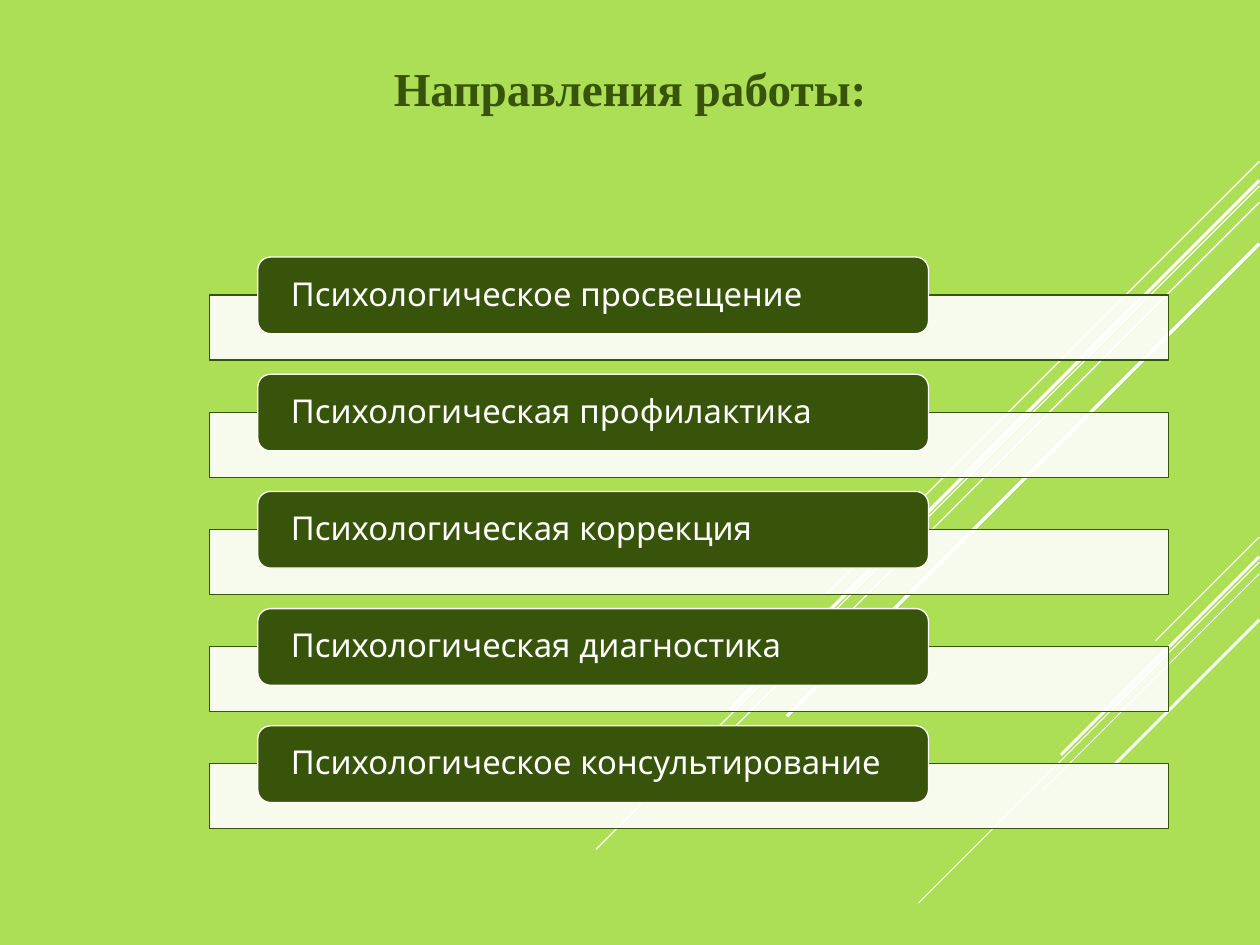
import pptx
import pptx.util
import pptx.dml.color
import pptx.enum.shapes
import pptx.enum.text
import pptx.oxml.ns
import lxml.etree

Cm, Pt = pptx.util.Cm, pptx.util.Pt
RGB = pptx.dml.color.RGBColor
Shape = pptx.enum.shapes.MSO_SHAPE
Align = pptx.enum.text.PP_ALIGN
Anchor = pptx.enum.text.MSO_ANCHOR
qn = pptx.oxml.ns.qn

# Content
TITLE = "Направления работы:"
ITEMS = [
    "Психологическое просвещение",
    "Психологическая профилактика",
    "Психологическая коррекция",
    "Психологическая диагностика",
    "Психологическое консультирование",
]

# Diagonal rays falling left from the right edge: top, run (cm), width (pt)
EDGE = 33.85
RAYS = [
    (14.43, 2.79, 0.75), (15.11, 9.16, 0.75), (15.42, 5.82, 0.75),
    (14.96, 5.33, 2.25), (16.66, 3.87, 2.25),
    (4.34, 11.61, 1), (5, 17.83, 1), (5.44, 14.49, 1),
    (4.85, 14.22, 2.5), (6.55, 12.7, 2.5),
]

# Colours
LIME = RGB(0xAC, 0xDF, 0x55)
GREEN = RGB(0x38, 0x54, 0x0A)
WHITE = RGB(0xFF, 0xFF, 0xFF)

# Row layout (cm)
TOP, STEP, DROP = 6.91, 3.15, 1.02
INSET = 0.79


def write(shape, text, font, size, color, bold=False, align=Align.LEFT,
          space=1.0, inset=0.0, wrap=True):
    frame = shape.text_frame
    frame.word_wrap = wrap
    frame.vertical_anchor = Anchor.MIDDLE
    frame.margin_left = frame.margin_right = Cm(inset)
    frame.margin_top = frame.margin_bottom = 0
    para = frame.paragraphs[0]
    para.alignment = align
    para.line_spacing = space
    run = para.add_run()
    run.text = text
    run.font.name = font
    run.font.size = Pt(size)
    run.font.bold = bold
    run.font.color.rgb = color


def draw(slide, kind, box, fill, line, alpha=100):
    shape = slide.shapes.add_shape(kind, *map(Cm, box))
    shape.shadow.inherit = False
    shape.fill.solid()
    shape.fill.fore_color.rgb = fill
    shape.line.color.rgb = line
    shape.line.width = Pt(1)
    if alpha < 100:
        tint = shape.element.spPr.find(qn("a:solidFill")).find(qn("a:srgbClr"))
        lxml.etree.SubElement(tint, qn("a:alpha"), val=str(alpha * 1000))
    return shape


def main():
    deck = pptx.Presentation()
    deck.slide_width, deck.slide_height = Cm(33.87), Cm(25.4)
    slide = deck.slides.add_slide(deck.slide_layouts[5])
    slide.background.fill.solid()
    slide.background.fill.fore_color.rgb = LIME

    # Rays at 45 degrees
    for top, run, width in RAYS:
        ray = slide.shapes.add_connector(
            pptx.enum.shapes.MSO_CONNECTOR.STRAIGHT,
            Cm(EDGE), Cm(top), Cm(EDGE - run), Cm(top + run))
        ray.line.color.rgb = WHITE
        ray.line.width = Pt(width)
        lxml.etree.SubElement(ray.element.spPr, qn("a:effectLst"))

    # Title
    title = slide.shapes.title
    title.left, title.top = Cm(10.26), Cm(1.45)
    title.width, title.height = Cm(13.36), Cm(1.8)
    write(title, TITLE, "Times New Roman", 36, GREEN, bold=True,
          align=Align.CENTER, wrap=False)

    # Rows: a pale bar with a label over its upper edge
    for num, item in enumerate(ITEMS):
        top = TOP + num * STEP
        draw(slide, Shape.RECTANGLE, (5.64, top + DROP, 25.78, 1.75),
             WHITE, GREEN, alpha=90)
        label = draw(slide, Shape.ROUNDED_RECTANGLE, (6.93, top, 18.03, 2.06),
                     GREEN, WHITE)
        write(label, item, "Quicksand", 25, WHITE, space=0.9, inset=INSET)

    deck.save("out.pptx")


if __name__ == "__main__":
    main()
